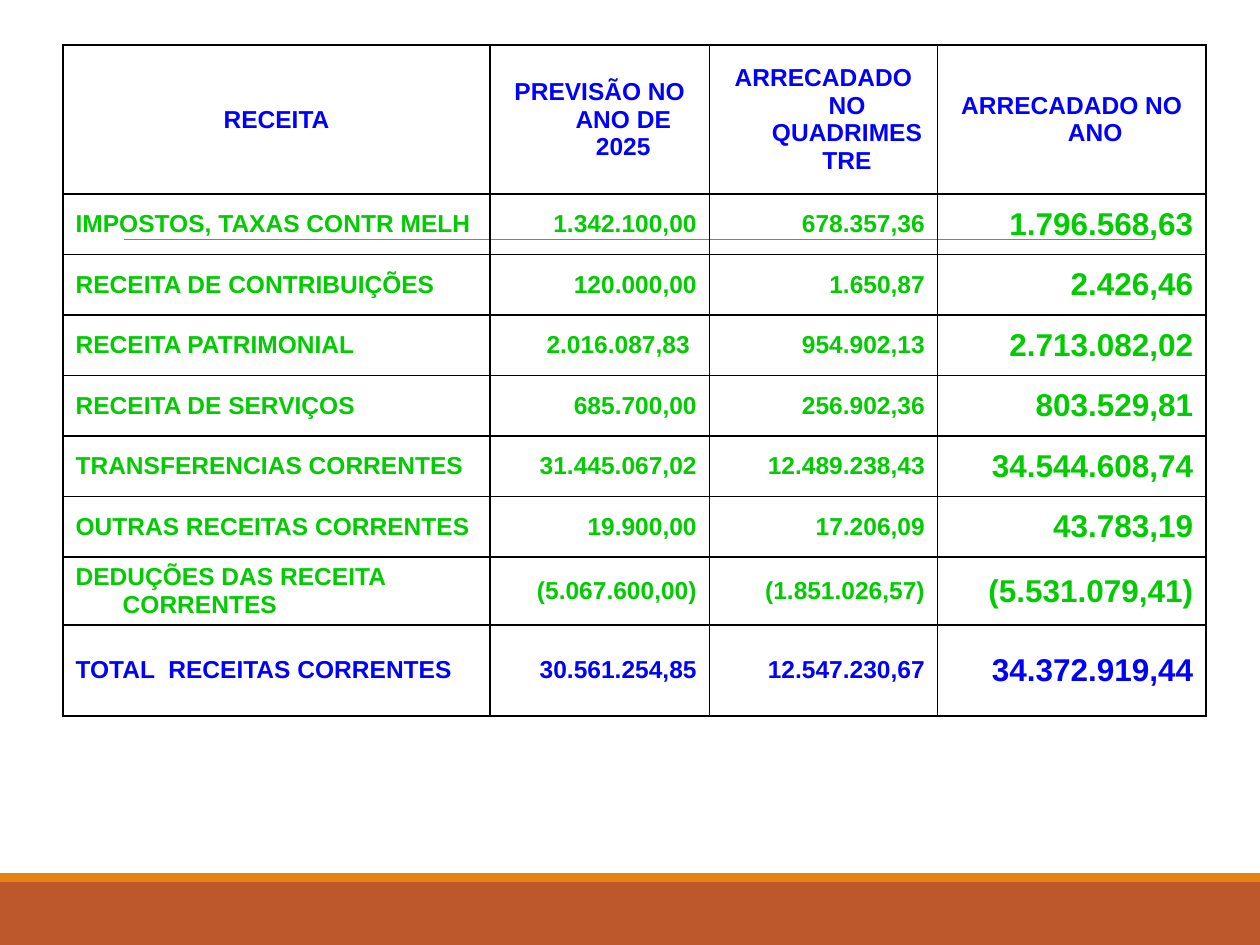
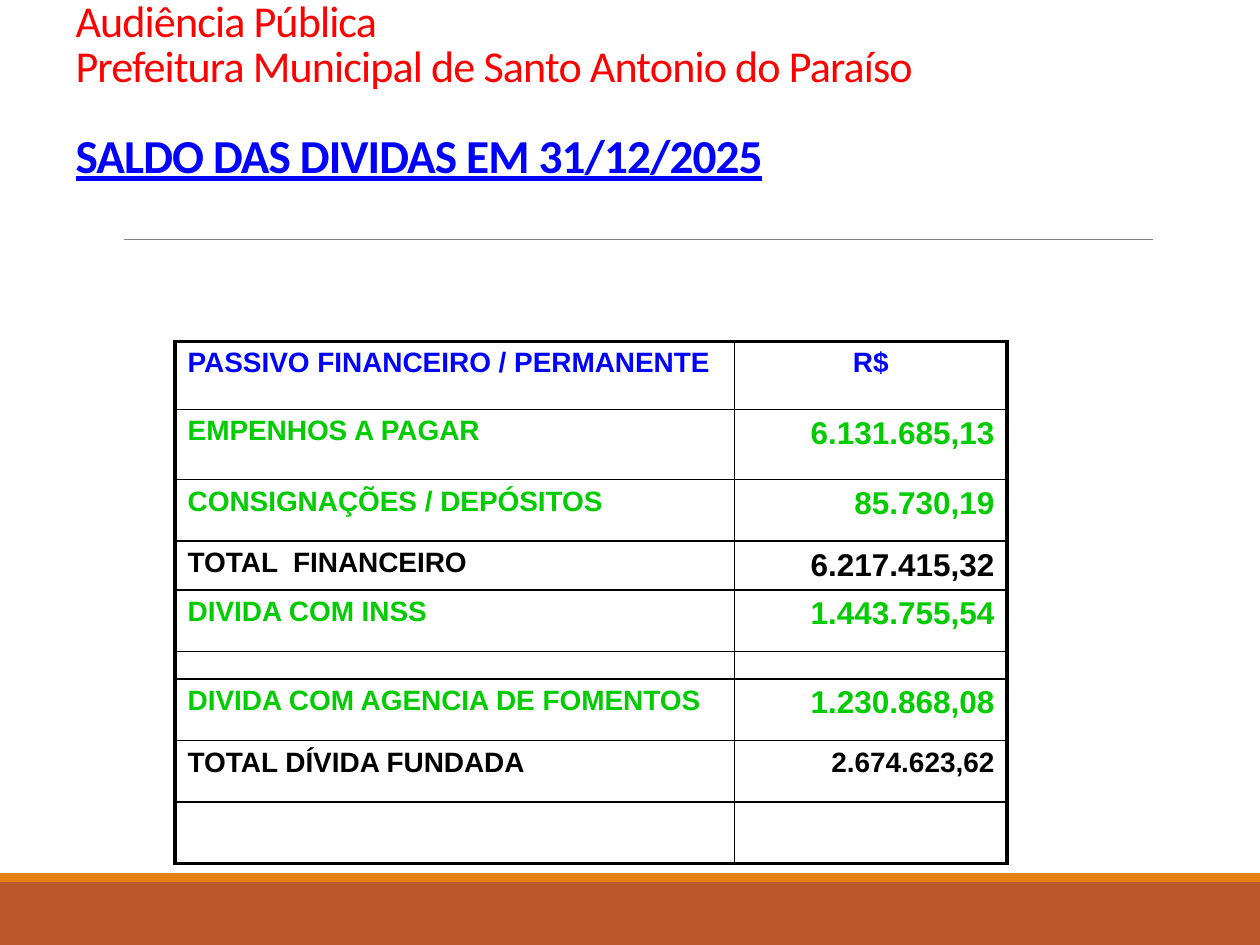
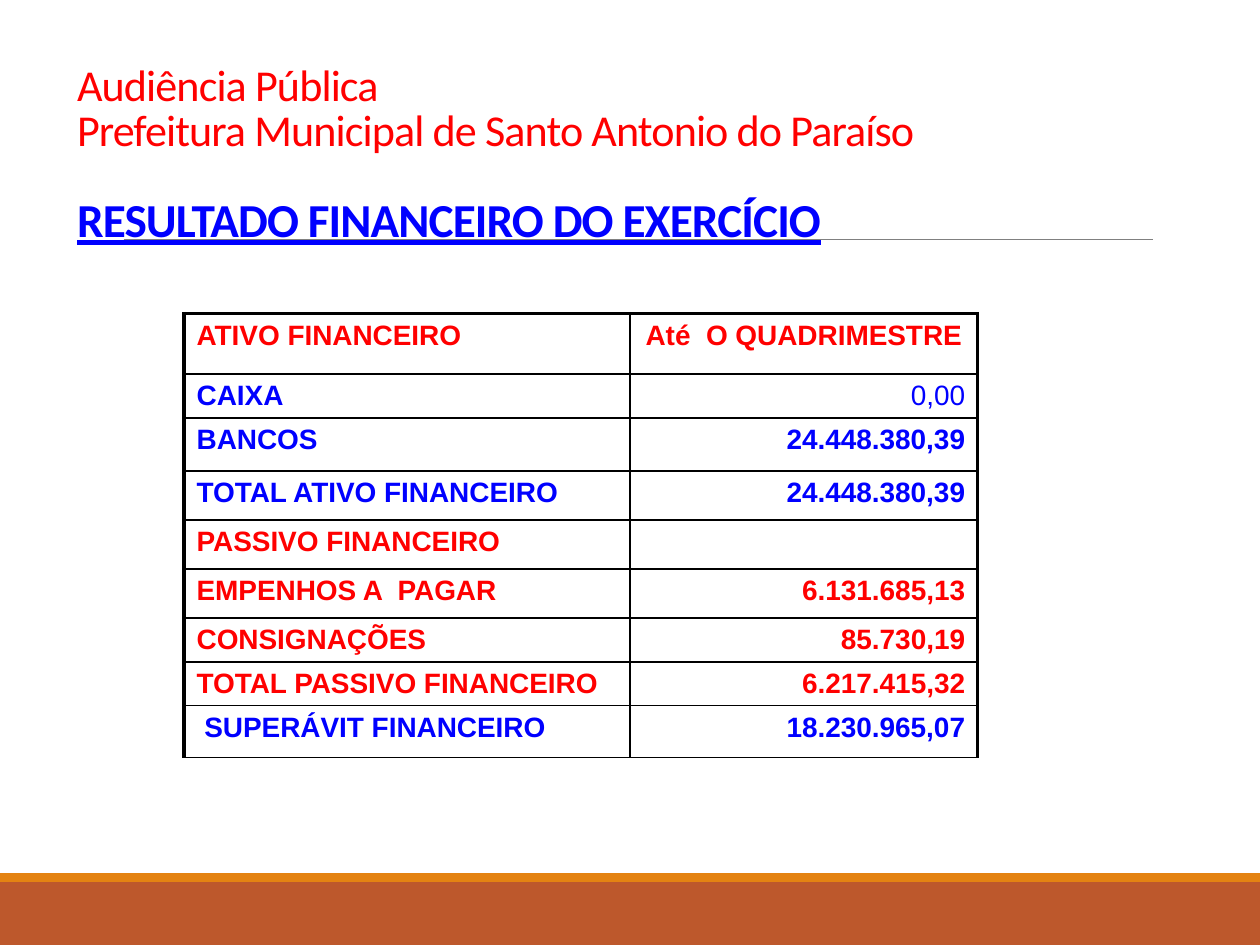
import lxml.etree
import pptx
import pptx.dml.color
import pptx.enum.shapes
import pptx.enum.text
import pptx.oxml.ns
import pptx.util

Cm = pptx.util.Cm
Pt = pptx.util.Pt
RGBColor = pptx.dml.color.RGBColor
ALIGN = pptx.enum.text.PP_ALIGN
ANCHOR = pptx.enum.text.MSO_ANCHOR
qn = pptx.oxml.ns.qn

BRICK = RGBColor(0xBD, 0x58, 0x2C)
ORANGE = RGBColor(0xE4, 0x83, 0x12)
GREY = RGBColor(0x80, 0x80, 0x80)
BLUE = RGBColor(0x00, 0x00, 0xFF)
GREEN = RGBColor(0x00, 0xCC, 0x00)
RED = RGBColor(0xFF, 0x00, 0x00)
BLACK = RGBColor(0x00, 0x00, 0x00)

THIN, THICK = 1, 2.25
TITLE_ONLY, BLANK = 5, 6


class Report:
    """Holds the deck, its style and the current page."""

    def __init__(self):
        self.deck = pptx.Presentation()
        self.deck.slide_width = Cm(25.4)
        self.deck.slide_height = Cm(19.05)
        self.page = None

    def new_page(self, layout):
        self.page = self.deck.slides.add_slide(self.deck.slide_layouts[layout])
        self.band(17.78, 1.27, BRICK)
        self.band(17.6, 0.18, ORANGE)
        self.rule(2.49, 23.24, 4.83)

    def band(self, top, height, colour):
        box = self.page.shapes.add_shape(
            pptx.enum.shapes.MSO_SHAPE.RECTANGLE,
            0, Cm(top), self.deck.slide_width, Cm(height))
        box.shadow.inherit = False
        box.fill.solid()
        box.fill.fore_color.rgb = colour
        box.line.fill.background()

    def rule(self, left, right, top):
        line = self.page.shapes.add_connector(
            pptx.enum.shapes.MSO_CONNECTOR.STRAIGHT,
            Cm(left), Cm(top), Cm(right), Cm(top))
        line.line.color.rgb = GREY
        line.line.width = Pt(0.5)
        lxml.etree.SubElement(line._element.spPr, qn("a:effectLst"))

    def title(self, left, top, subject):
        box = self.page.shapes.title
        box.left, box.top, box.width, box.height = Cm(left), Cm(top), Cm(22.86), Cm(3.18)
        frame = box.text_frame
        frame.auto_size = pptx.enum.text.MSO_AUTO_SIZE.NONE
        frame.vertical_anchor = ANCHOR.BOTTOM
        frame.text = "\n".join(
            ["Audiência Pública", "Prefeitura Municipal de Santo Antonio do Paraíso", subject])
        for para in frame.paragraphs:
            para.alignment = ALIGN.LEFT
            para.line_spacing = 0.85
            para.font.name = "Calibri"
            para.font.size = Pt(25.2)
            para.font.color.rgb = RED
            para._p.get_or_add_pPr().get_or_add_defRPr().set("spc", "-50")
        # The last line names the subject of the page
        para.space_before = Pt(25)
        para.font.size = Pt(27)
        para.font.color.rgb = BLUE
        para.font.bold = para.font.underline = True

    def borders(self, cell, widths):
        properties = cell._tc.get_or_add_tcPr()
        for side, width in zip("LRTB", widths):
            line = lxml.etree.SubElement(
                properties, qn("a:ln" + side), w=str(int(Pt(width))))
            fill = lxml.etree.SubElement(line, qn("a:solidFill"))
            lxml.etree.SubElement(fill, qn("a:srgbClr"), val=str(BLACK))

    def cell(self, cell, text, colour, size, alignment, hanging):
        para = cell.text_frame.paragraphs[0]
        if not text:
            cell.margin_top = cell.margin_bottom = 0
            para.font.size = Pt(6)
            return
        para.text = text
        para.alignment = alignment
        if hanging:
            properties = para._p.get_or_add_pPr()
            properties.set("marL", str(Cm(hanging)))
            properties.set("indent", str(-Cm(hanging)))
        para.font.name = "Arial"
        para.font.size = Pt(size)
        para.font.bold = True
        para.font.color.rgb = colour

    def table(self, left, top, widths, rows, sizes, header_alignments,
              frame=(THICK, THICK, THICK, THICK), anchor=ANCHOR.TOP, hanging=0):
        """Rows are (height, colour, texts); frame is left, right, top, bottom."""
        heights = [height for height, colour, texts in rows]
        table = self.page.shapes.add_table(
            len(rows), len(widths), Cm(left), Cm(top),
            Cm(sum(widths)), Cm(sum(heights))).table
        table.first_row = table.horz_banding = False
        for column, width in zip(table.columns, widths):
            column.width = Cm(width)
        for r, (height, colour, texts) in enumerate(rows):
            table.rows[r].height = Cm(height)
            for c, text in enumerate(texts):
                cell = table.cell(r, c)
                cell.vertical_anchor = anchor
                outer = (c == 0, c == len(widths) - 1, r == 0, r == len(rows) - 1)
                self.borders(cell, [edge if is_outer else THIN
                                    for edge, is_outer in zip(frame, outer)])
                cell.fill.background()
                if r == 0:
                    size, alignment = sizes[0], header_alignments[c]
                else:
                    size = sizes[c]
                    alignment = ALIGN.RIGHT if c else ALIGN.LEFT
                self.cell(cell, text, colour, size, alignment, hanging)
        return table


def main():
    report = Report()

    # Current revenue
    report.new_page(BLANK)
    report.table(
        1.27, 0.91, (8.61, 4.42, 4.6, 5.41),
        [
            (3, BLUE, ("RECEITA", "PREVISÃO NO ANO DE 2025",
                       "ARRECADADO NO QUADRIMESTRE", "ARRECADADO NO ANO")),
            (1.22, GREEN, ("IMPOSTOS, TAXAS CONTR MELH",
                           "1.342.100,00", "678.357,36", "1.796.568,63")),
            (1.22, GREEN, ("RECEITA DE CONTRIBUIÇÕES",
                           "120.000,00", "1.650,87", "2.426,46")),
            (1.22, GREEN, ("RECEITA PATRIMONIAL",
                           "2.016.087,83 ", "954.902,13", "2.713.082,02")),
            (1.22, GREEN, ("RECEITA DE SERVIÇOS",
                           "685.700,00", "256.902,36", "803.529,81")),
            (1.22, GREEN, ("TRANSFERENCIAS CORRENTES",
                           "31.445.067,02", "12.489.238,43", "34.544.608,74")),
            (1.22, GREEN, ("OUTRAS RECEITAS CORRENTES",
                           "19.900,00", "17.206,09", "43.783,19")),
            (1.37, GREEN, ("DEDUÇÕES DAS RECEITA CORRENTES",
                           "(5.067.600,00)", "(1.851.026,57)", "(5.531.079,41)")),
            (1.83, BLUE, ("TOTAL  RECEITAS CORRENTES",
                          "30.561.254,85", "12.547.230,67", "34.372.919,44")),
        ],
        sizes=(14, 14, 14, 18), header_alignments=[ALIGN.CENTER] * 4,
        frame=(THIN,) * 4, anchor=ANCHOR.MIDDLE, hanging=0.95)

    # Debt balances
    report.new_page(TITLE_ONLY)
    report.title(1.27, 0.64, "SALDO DAS DIVIDAS EM 31/12/2025")
    debts = report.table(
        3.53, 6.88, (11.28, 5.49),
        [
            (1.37, BLUE, ("PASSIVO FINANCEIRO / PERMANENTE", "R$")),
            (1.42, GREEN, ("EMPENHOS A PAGAR", "6.131.685,13")),
            (1.24, GREEN, ("CONSIGNAÇÕES / DEPÓSITOS", "85.730,19")),
            (0.98, BLACK, ("TOTAL  FINANCEIRO", "6.217.415,32")),
            (1.24, GREEN, ("DIVIDA COM INSS", "1.443.755,54")),
            (0.56, BLACK, ("", "")),
            (1.24, GREEN, ("DIVIDA COM AGENCIA DE FOMENTOS", "1.230.868,08")),
            (1.24, BLACK, ("TOTAL DÍVIDA FUNDADA", "2.674.623,62")),
            (1.24, BLACK, ("", "")),
        ],
        sizes=(16, 18), header_alignments=(ALIGN.LEFT, ALIGN.CENTER))
    debts.cell(7, 1).text_frame.paragraphs[0].font.size = Pt(16)

    # Financial result
    report.new_page(TITLE_ONLY)
    report.title(1.3, 1.93, "RESULTADO FINANCEIRO DO EXERCÍCIO")
    result = report.table(
        3.71, 6.32, (8.99, 7.01),
        [
            (1.22, RED, ("ATIVO FINANCEIRO", "Até  O QUADRIMESTRE")),
            (0.87, BLUE, ("CAIXA", "0,00")),
            (1.07, BLUE, ("BANCOS", "24.448.380,39")),
            (0.99, BLUE, ("TOTAL ATIVO FINANCEIRO", "24.448.380,39")),
            (0.99, RED, ("PASSIVO FINANCEIRO", "")),
            (0.99, RED, ("EMPENHOS A  PAGAR", "6.131.685,13")),
            (0.87, RED, ("CONSIGNAÇÕES", "85.730,19")),
            (0.87, RED, ("TOTAL PASSIVO FINANCEIRO", "6.217.415,32")),
            (1.04, BLUE, (" SUPERÁVIT FINANCEIRO", "18.230.965,07")),
        ],
        sizes=(16, 16), header_alignments=(ALIGN.LEFT, ALIGN.CENTER),
        frame=(THICK, THICK, THICK, THIN))
    result.cell(1, 1).text_frame.paragraphs[0].font.bold = False

    report.deck.save("out.pptx")


if __name__ == "__main__":
    main()
